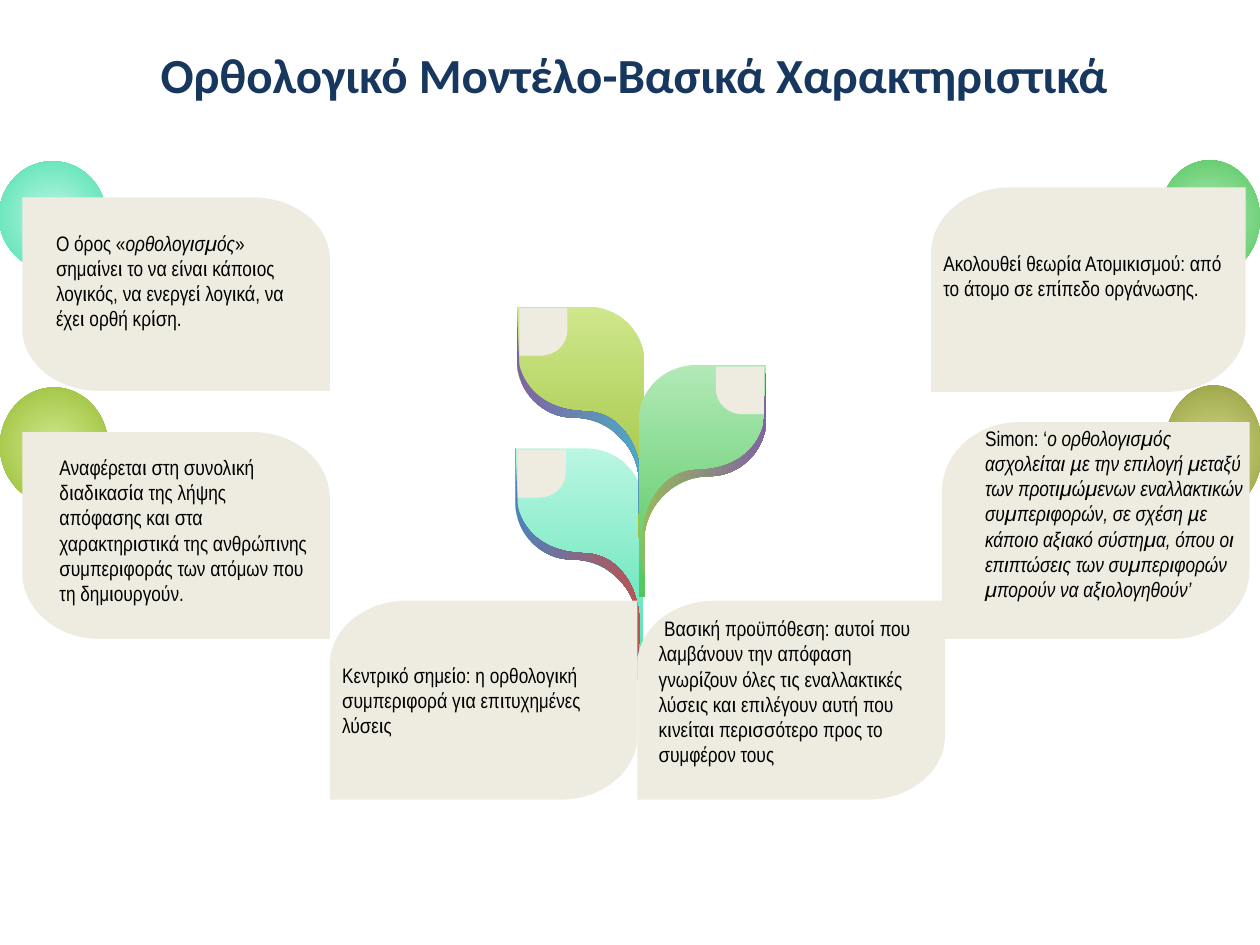
from lxml import etree
from pptx import Presentation
from pptx import util as u
from pptx.dml.color import RGBColor
from pptx.enum import shapes, text
from pptx.oxml.ns import qn

# ---- Content: texts are lists of (wording, italic) ----
TITLE = "Ορθολογικό Μοντέλο-Βασικά Χαρακτηριστικά"
TERM = [
    ("Ο όρος «", False),
    ("ορθολογισμός", True),
    ("» σημαίνει το να είναι κάποιος λογικός, να ενεργεί λογικά, "
     "να έχει ορθή κρίση.", False),
]
PROCESS = [("Αναφέρεται στη συνολική διαδικασία της λήψης απόφασης και στα "
            "χαρακτηριστικά της ανθρώπινης συμπεριφοράς των ατόμων που τη "
            "δημιουργούν.", False)]
SIMON = [
    ("Simon: ‘", False),
    ("ο ορθολογισμός ασχολείται µε την επιλογή μεταξύ των προτιμώμενων "
     "εναλλακτικών συμπεριφορών, σε σχέση µε κάποιο αξιακό σύστημα, όπου οι "
     "επιπτώσεις των συμπεριφορών μπορούν να αξιολογηθούν’", True),
]
ATOMISM = [("Ακολουθεί θεωρία Ατομικισμού: από το άτομο σε επίπεδο οργάνωσης.", False)]
FOCUS = [("Κεντρικό σημείο: η ορθολογική συμπεριφορά για επιτυχημένες λύσεις", False)]
PREMISE = [
    (" ", False),
    ("Βασική προϋπόθεση: αυτοί που λαμβάνουν την απόφαση γνωρίζουν όλες "
     "τις εναλλακτικές λύσεις και επιλέγουν αυτή που κινείται περισσότερο "
     "προς το συμφέρον τους", False),
]

COLORS = {
    "title": "17375E", "text": "000000", "card": "EEECE1",
    "mint": ("BAF6E2", "4DE0AF"), "lime": ("CEE78C", "98BD32"),
    "green": ("B1E9B7", "52C65D"), "olive": ("D1D786", "959D3E"),
    "rim_blue_red": ("4F81BD", "C0504D"), "rim_purple_teal": ("8064A2", "4BACC6"),
    "rim_green_purple": ("9BBB59", "8064A2"),
}

# Leaf outlines in cm from the leaf's tip corner: one point is a line, three a curve
BLADE = [
    [(0, 0)], [(0, 1.09)],
    [(0, 1.7), (0.51, 2.24), (1.14, 2.24)],
    [(1.85, 2.24), (2.46, 2.82), (2.46, 3.53)],
    [(2.46, 4.67)], [(2.57, 4.67)], [(2.57, 1.14)],
    [(2.57, 0.51), (2.06, 0), (1.42, 0)],
]
TAB = [
    [(0.05, 0.03)], [(0.05, 0.99)], [(0.48, 0.99)],
    [(0.79, 0.99), (1.02, 0.76), (1.02, 0.46)], [(1.02, 0.03)],
]
RIM = [
    [(0, 0)], [(0, 1.09)],
    [(0, 1.7), (0.51, 2.24), (1.14, 2.24)],
    [(1.5, 2.24), (1.83, 2.36), (2.06, 2.62)],
    [(2.31, 2.84), (2.46, 3.18), (2.46, 3.53)],
    [(2.46, 4.19)],
    [(2.62, 3.2), (2.36, 2.67), (2.06, 2.39)],
    [(1.88, 2.21), (1.63, 2.11), (1.35, 2.11)],
    [(0.18, 2.06), (0.05, 1.17), (0.05, 1.17)],
]

# Leaves: tip corner, direction (-1 grows to the left), blade and rim colours
LEAVES = [
    (10.39, 9.04, 1, "mint", "rim_blue_red"),
    (10.42, 6.18, 1, "lime", "rim_purple_teal"),
    (15.45, 7.36, -1, "green", "rim_green_purple"),
]
# Cards: box, direction, disc box and colour
OUTER_CARDS = [
    ((0.45, 3.98, 6.2, 3.9), 1, (-0.02, 3.25, 2.16, 2.21), "mint"),
    ((0.45, 8.71, 6.2, 4.17), 1, (0, 7.81, 2.18, 2.36), "lime"),
    ((18.99, 8.51, 6.2, 4.37), -1, (23.47, 7.77, 1.98, 2.57), "olive"),
    ((18.77, 3.78, 6.34, 4.12), -1, (23.37, 3.23, 2.03, 2.34), "green"),
]
LOWER_CARDS = [(6.65, 12.11, 6.2, 4.01), (12.85, 12.11, 6.2, 4.01)]
CAPTIONS = [
    ((0.95, 9.04, 5.61, 4.37), PROCESS),
    ((0.88, 4.52, 5.69, 2.31), TERM),
    ((19.61, 8.45, 5.74, 4.88), SIMON),
]
PREMISE_BOX = (13.03, 12.29, 5.84, 3.84)

prs = Presentation()
prs.slide_width, prs.slide_height = u.Cm(25.4), u.Cm(19.05)
slide = prs.slides.add_slide(prs.slide_layouts[5])


def cm(box):
    return [u.Cm(value) for value in box]


def paint(shape, color, angle=None):
    """Plain fill for one hex; for a pair a gradient, radial without an angle."""
    shape.shadow.inherit = False
    shape.line.fill.background()
    if isinstance(color, str):
        shape.fill.solid()
        shape.fill.fore_color.rgb = RGBColor.from_string(color)
        return
    shape.fill.gradient()
    for stop, shade, position in zip(shape.fill.gradient_stops, color, (0, 1)):
        stop.color.rgb = RGBColor.from_string(shade)
        stop.position = position
    if angle is not None:
        shape.fill.gradient_angle = angle
        return
    linear = shape._element.spPr.find(qn("a:gradFill")).find(qn("a:lin"))
    radial = etree.Element(qn("a:path"), {"path": "circle"})
    etree.SubElement(radial, qn("a:fillToRect"), dict.fromkeys("ltrb", "50000"))
    linear.getparent().replace(linear, radial)


def add_outline(outline, left, top, direction):
    """Freeform through all points, then each group of three made one curve."""
    placed = [(u.Cm(left + direction * x), u.Cm(top + y))
              for segment in outline for x, y in segment]
    builder = slide.shapes.build_freeform(*placed[0])
    builder.add_line_segments(placed[1:], close=True)
    shape = builder.convert_to_shape()
    lines = iter(list(shape._element.iter(qn("a:lnTo"))))
    for segment in outline[1:]:
        steps = [next(lines) for _ in segment]
        if len(steps) == 3:
            curve = etree.Element(qn("a:cubicBezTo"))
            steps[0].addprevious(curve)
            for step in steps:
                curve.append(step[0])
                step.getparent().remove(step)
    return shape


def add_card(box, direction):
    """Rectangle with two opposite corners rounded."""
    left, top, w, h = box
    rx, ry = 0.25 * w, 0.32 * h
    kx, ky = 0.45 * rx, 0.45 * ry
    outline = [
        [(0, 0)], [(0, h - ry)], [(0, h - ky), (kx, h), (rx, h)],
        [(w, h)], [(w, ry)], [(w, ky), (w - kx, 0), (w - rx, 0)],
    ]
    card = add_outline(outline, left if direction == 1 else left + w, top, direction)
    paint(card, COLORS["card"])
    return card


def write(frame, wording):
    frame.word_wrap = True
    paragraph = frame.paragraphs[0]
    paragraph.alignment = text.PP_ALIGN.LEFT
    for words, italic in wording:
        run = paragraph.add_run()
        run.text = words
        run.font.name, run.font.size = "Arial Narrow", u.Pt(12)
        run.font.italic = italic
        run.font.color.rgb = RGBColor.from_string(COLORS["text"])
    return paragraph


def write_in_card(card, wording, bottom=0.25):
    frame = card.text_frame
    frame.vertical_anchor = text.MSO_ANCHOR.MIDDLE
    frame.margin_left = frame.margin_right = frame.margin_top = u.Cm(0.25)
    frame.margin_bottom = u.Cm(bottom)
    write(frame, wording)


def add_caption(box, wording):
    return write(slide.shapes.add_textbox(*cm(box)).text_frame, wording)


# ---- Title ----
title = slide.shapes.title
title.left, title.top, title.width, title.height = cm((1.35, 0.64, 22.86, 2.77))
title.text_frame.text = TITLE
title.text_frame.vertical_anchor = text.MSO_ANCHOR.TOP
title.text_frame.margin_top = u.Cm(0.25)
heading = title.text_frame.paragraphs[0]
heading.alignment = text.PP_ALIGN.CENTER
heading_font = heading.runs[0].font
heading_font.name, heading_font.size, heading_font.bold = "Calibri", u.Pt(28), True
heading_font.color.rgb = RGBColor.from_string(COLORS["title"])

# ---- Plant ----
for left, top, direction, blade, rim in LEAVES:
    for outline, color, angle in ((BLADE, COLORS[blade], 270),
                                  (TAB, COLORS["card"], None),
                                  (RIM, COLORS[rim], 0)):
        paint(add_outline(outline, left, top, direction), color, angle)

# ---- Outer cards with their discs ----
for box, direction, disc_box, color in OUTER_CARDS:
    disc = slide.shapes.add_shape(shapes.MSO_SHAPE.OVAL, *cm(disc_box))
    paint(disc, COLORS[color])
    card = add_card(box, direction)
write_in_card(card, ATOMISM, bottom=0.83)
for box, wording in CAPTIONS:
    add_caption(box, wording)

# ---- Lower cards ----
focus_card, premise_card = [add_card(box, -1) for box in LOWER_CARDS]
write_in_card(focus_card, FOCUS)
lead = add_caption(PREMISE_BOX, PREMISE).runs[0].font
lead.name, lead.size = "Arial", u.Pt(11)

prs.save("out.pptx")
